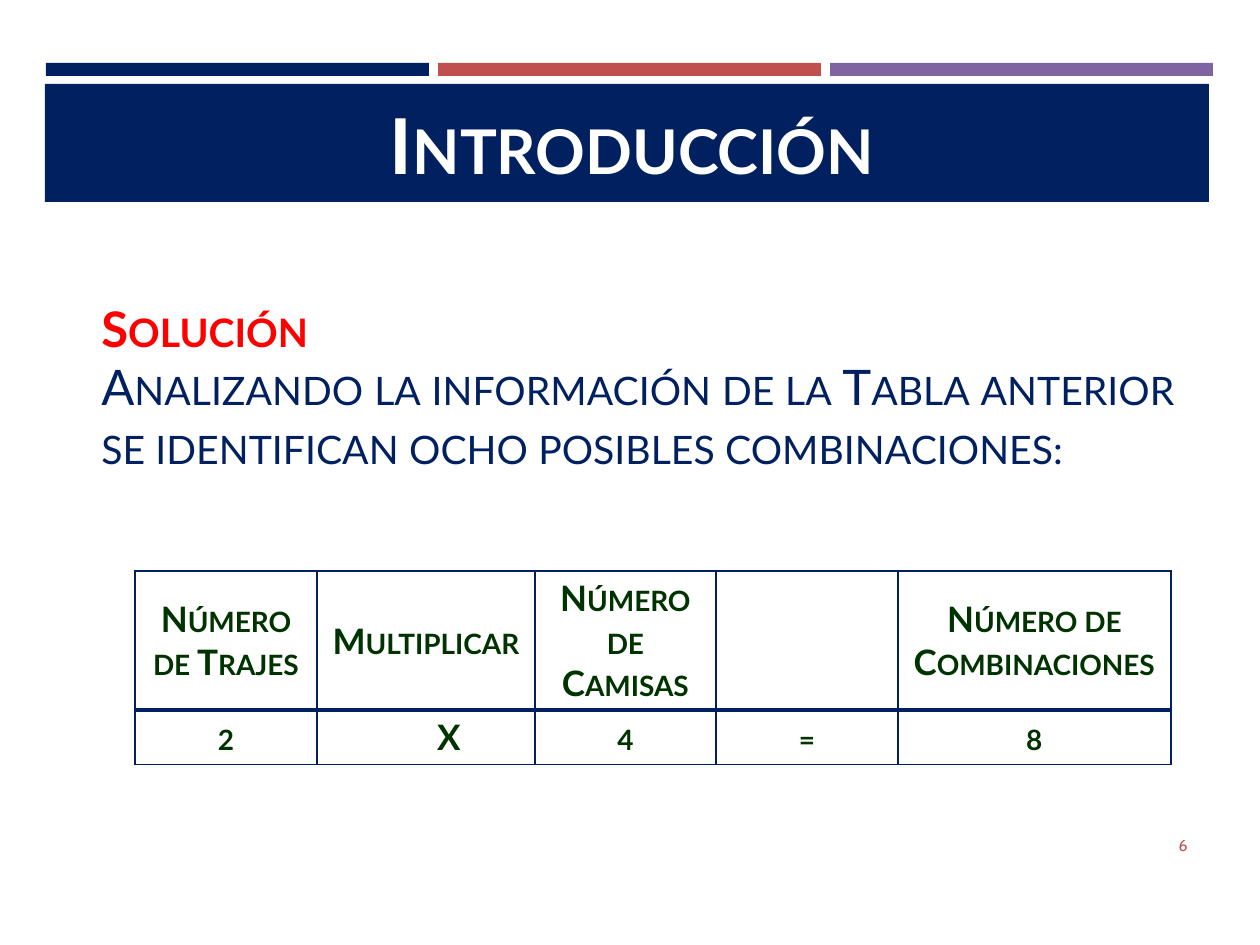
from lxml import etree
from pptx import Presentation
from pptx.dml.color import RGBColor
from pptx.enum.shapes import MSO_SHAPE
from pptx.enum.text import MSO_ANCHOR, PP_ALIGN
from pptx.oxml.ns import qn
from pptx.util import Emu, Pt

RECTANGLE = MSO_SHAPE.RECTANGLE
TOP, MIDDLE = MSO_ANCHOR.TOP, MSO_ANCHOR.MIDDLE
CENTER, RIGHT, JUSTIFY = PP_ALIGN.CENTER, PP_ALIGN.RIGHT, PP_ALIGN.JUSTIFY
NAVY, RED, PURPLE = "002060", "C0504D", "8064A2"
WHITE, BRIGHT_RED, GREEN = "FFFFFF", "FF0000", "003300"
PX_PER_INCH = 126


def px(length):
    return Emu(round(length * 914400 / PX_PER_INCH))


def color(value):
    return RGBColor.from_string(value)


class SlideBuilder:
    font = "Lato"

    def __init__(self, page):
        self.page = page

    def bar(self, left, top, width, height, fill):
        box = self.page.shapes.add_shape(
            RECTANGLE, px(left), px(top), px(width), px(height))
        box.shadow.inherit = False
        box.fill.solid()
        box.fill.fore_color.rgb = color(fill)
        box.line.fill.background()

    def style(self, para, size, ink, align, bold=True, small_caps=True, font=font):
        para.alignment = align
        para.font.size = Pt(size)
        para.font.name = font
        para.font.bold = bold
        para.font.color.rgb = color(ink)
        if small_caps:
            para._p.pPr.find(qn("a:defRPr")).set("cap", "small")

    def text(self, left, top, width, height, lines, anchor=MIDDLE, indent=0):
        box = self.page.shapes.add_textbox(px(left), px(top), px(width), px(height))
        frame = box.text_frame
        frame.word_wrap = True
        frame.vertical_anchor = anchor
        for index, (words, look) in enumerate(lines):
            para = frame.add_paragraph() if index else frame.paragraphs[0]
            para.text = words
            self.style(para, **look)
            if indent:
                para._p.get_or_add_pPr().set("marL", str(px(indent)))

    def border(self, cell, sides):
        properties = cell._tc.get_or_add_tcPr()
        for index, (side, width) in enumerate(sides.items()):
            line = etree.Element(qn(f"a:ln{side}"), w=str(Pt(width)))
            fill = etree.SubElement(line, qn("a:solidFill"))
            etree.SubElement(fill, qn("a:srgbClr"), val=NAVY)
            properties.insert(index, line)

    def table(self, left, top, widths, heights, rows):
        grid = self.page.shapes.add_table(
            len(rows), len(widths), px(left), px(top),
            px(sum(widths)), px(sum(heights))).table
        for column, width in zip(grid.columns, widths):
            column.width = px(width)
        for row, height in zip(grid.rows, heights):
            row.height = px(height)
        for r, row in enumerate(rows):
            sides = {"L": 1, "R": 1, "T": 1 if r == 0 else 2, "B": 2 if r == 0 else 1}
            for c, words in enumerate(row):
                cell = grid.cell(r, c)
                cell.text = words
                cell.vertical_anchor = MIDDLE
                cell.fill.background()
                self.style(cell.text_frame.paragraphs[0], 20, GREEN, CENTER)
                self.border(cell, sides)
        return grid


def main():
    deck = Presentation()
    deck.slide_width, deck.slide_height = px(1260), px(945)
    slide = SlideBuilder(deck.slides.add_slide(deck.slide_layouts[6]))

    for index, fill in enumerate((NAVY, RED, PURPLE)):
        slide.bar(46 + index * 392, 63, 383, 13, fill)
    slide.bar(45, 84, 1164, 118, NAVY)
    slide.text(348, 89, 568, 110, [
        ("Introducción", dict(size=44, ink=WHITE, align=CENTER))])

    slide.text(74, 292, 1113, 251, [
        ("Solución", dict(size=28, ink=BRIGHT_RED, align=JUSTIFY)),
        ("Analizando la información de la Tabla anterior se identifican "
         "ocho posibles combinaciones:",
         dict(size=28, ink=NAVY, align=JUSTIFY, bold=False)),
    ], anchor=TOP, indent=15)

    grid = slide.table(135, 571, (182, 218, 181, 182, 273), (139, 54), (
        ("Número de Trajes", "Multiplicar", "Número de Camisas", "",
         "Número de Combinaciones"),
        ("2", "X", "4", "=", "8")))
    grid.cell(1, 1).margin_left = px(35)

    slide.text(1091, 820, 109, 51, [
        ("6", dict(size=9, ink=RED, align=RIGHT, bold=False,
                   small_caps=False, font="Cabin"))])
    deck.save("out.pptx")


if __name__ == "__main__":
    main()
